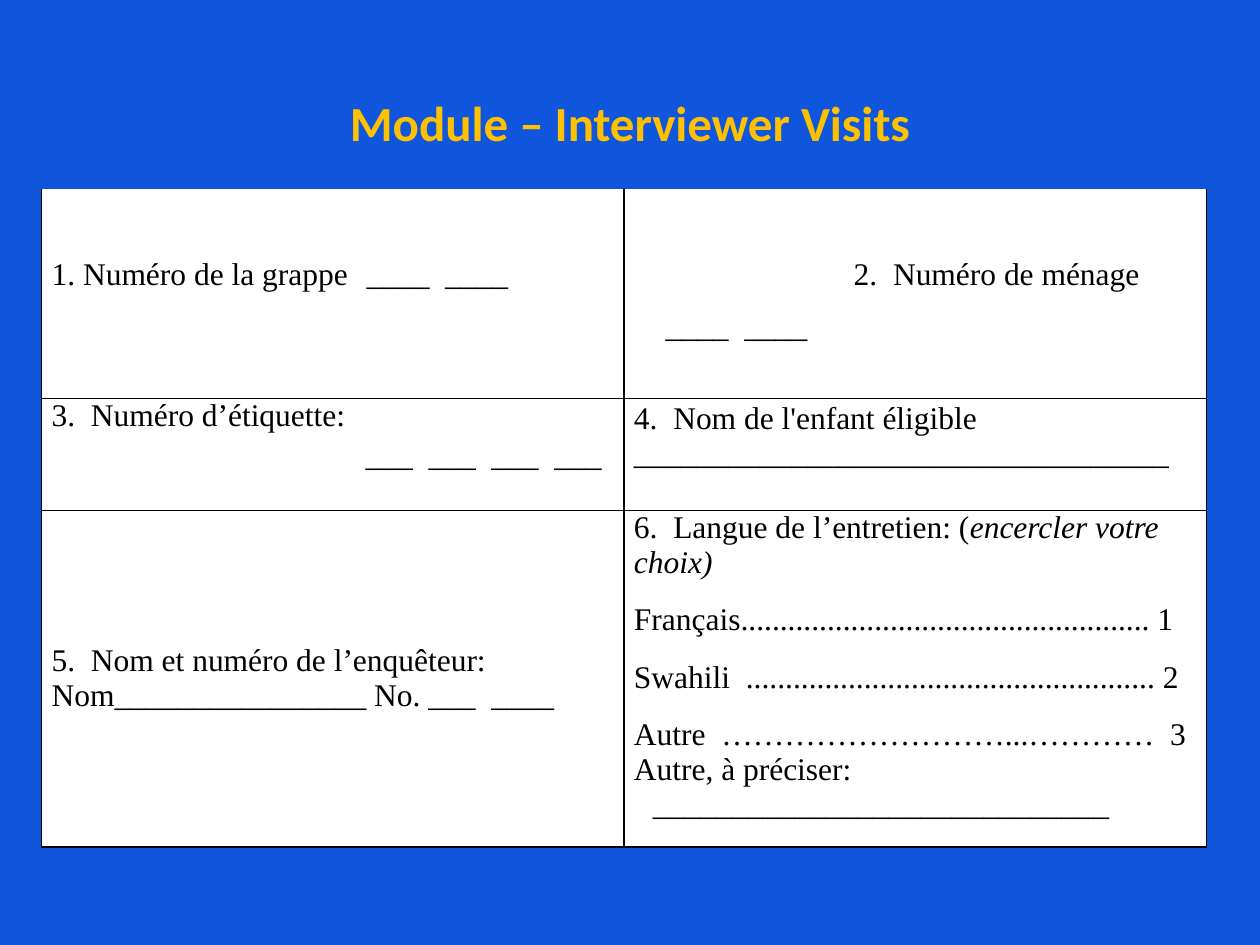
from lxml import etree
from pptx import Presentation
from pptx.dml.color import RGBColor
from pptx.enum.text import MSO_ANCHOR, PP_ALIGN
from pptx.oxml.ns import qn
from pptx.util import Cm, Pt

TOP, MIDDLE, BOTTOM = MSO_ANCHOR.TOP, MSO_ANCHOR.MIDDLE, MSO_ANCHOR.BOTTOM
CENTER = PP_ALIGN.CENTER

BLUE, GOLD, WHITE, BLACK = "0F56DC", "FFC000", "FFFFFF", "000000"
BODY_FONT, TITLE_FONT = "Times New Roman", "Calibri"
HANGING = dict(left=0.38, first=-0.38)

# Each cell: anchor, top margin in cm, paragraphs of (text or spans, format)
QUESTIONS = [
    [
        (TOP, 1.37, [("1. Numéro de la grappe\t____  ____", dict(tab=7.24))]),
        (TOP, 1.37, [("2.  Numéro de ménage", dict(left=4.43)),
                     ("____  ____", dict(left=0.64, spacing=1.5))]),
    ],
    [
        (TOP, 0, [("3.  Numéro d’étiquette:", dict(after=2.9)),
                  ("___  ___  ___  ___", dict(left=6.33))]),
        (TOP, 0.06, [("4.  Nom de l'enfant éligible", HANGING),
                     ("__________________________________", {})]),
    ],
    [
        (MIDDLE, 0, [("5.  Nom et numéro de l’enquêteur:", HANGING),
                     ("Nom________________ No. ___  ____", {})]),
        (TOP, 0, [
            ([("6.  Langue de l’entretien: (", False),
              ("encercler votre choix)", True)], dict(after=2.9)),
            ("Français.................................................... 1",
             dict(spacing=1.5, after=2.9)),
            ("Swahili  .................................................... 2",
             dict(spacing=1.5, after=2.9)),
            ("Autre  ………………………...…………  3", dict(HANGING, spacing=1.5)),
            ("Autre, à préciser: _____________________________", HANGING),
        ]),
    ],
]


def color(value):
    return RGBColor.from_string(value)


def write(para, text, size=18, font=BODY_FONT, fill=BLACK, bold=False,
          left=0, first=0, tab=None, spacing=1.0, after=0, align=None):
    """Fill a paragraph with text or (text, italic) spans; indents are in cm."""
    props = para._p.get_or_add_pPr()
    props.set("marL", str(Cm(left)))
    props.set("indent", str(Cm(first)))
    if tab:
        stops = etree.SubElement(props, qn("a:tabLst"))
        etree.SubElement(stops, qn("a:tab"), pos=str(Cm(tab)), algn="l")
    para.line_spacing = spacing
    para.space_after = Pt(after)
    para.alignment = align
    spans = [(text, False)] if isinstance(text, str) else text
    for words, italic in spans:
        span = para.add_run()
        span.text = words
        span.font.name = font
        span.font.size = Pt(size)
        span.font.bold = bold
        span.font.italic = italic
        span.font.color.rgb = color(fill)


def draw_borders(cell, sides):
    """Draw black lines on the given sides (L, R, T, B) and none on the rest."""
    props = cell._tc.get_or_add_tcPr()
    for side in "LRTB":
        line = etree.SubElement(props, qn(f"a:ln{side}"), w=str(Pt(1)))
        if side in sides:
            fill = etree.SubElement(line, qn("a:solidFill"))
            etree.SubElement(fill, qn("a:srgbClr"), val=BLACK)
        else:
            etree.SubElement(line, qn("a:noFill"))


def fill_cell(cell, anchor, top_margin, paragraphs, sides):
    draw_borders(cell, sides)
    cell.fill.solid()
    cell.fill.fore_color.rgb = color(WHITE)
    cell.vertical_anchor = anchor
    cell.margin_left = cell.margin_right = Cm(0.2)
    cell.margin_top, cell.margin_bottom = Cm(top_margin), 0
    frame = cell.text_frame
    for index, (text, style) in enumerate(paragraphs):
        para = frame.add_paragraph() if index else frame.paragraphs[0]
        write(para, text, **style)


def add_title(page, left, top, width, height):
    box = page.shapes.add_textbox(Cm(left), Cm(top), Cm(width), Cm(height))
    frame = box.text_frame
    frame.word_wrap = True
    frame.vertical_anchor = BOTTOM
    write(frame.paragraphs[0], "Module – Interviewer Visits", size=28,
          font=TITLE_FONT, fill=GOLD, bold=True, spacing=Pt(30), align=CENTER)


def add_questions(page, left, top, width, row_heights):
    rows, columns = len(QUESTIONS), len(QUESTIONS[0])
    table = page.shapes.add_table(rows, columns, Cm(left), Cm(top), Cm(width),
                                  Cm(sum(row_heights))).table
    table.first_row = table.horz_banding = False
    for column in table.columns:
        column.width = Cm(width / columns)
    for r, height in enumerate(row_heights):
        table.rows[r].height = Cm(height)
        for c, content in enumerate(QUESTIONS[r]):
            fill_cell(table.cell(r, c), *content, sides="LRTB" if r else "LRB")


def main():
    deck = Presentation()
    deck.slide_width, deck.slide_height = Cm(25.4), Cm(19.05)
    page = deck.slides.add_slide(deck.slide_layouts[6])
    page.background.fill.solid()
    page.background.fill.fore_color.rgb = color(BLUE)
    add_title(page, 1.27, 0, 22.86, 3.18)
    add_questions(page, 0.84, 3.81, 23.48, [4.22, 2.26, 6.27])
    deck.save("out.pptx")


if __name__ == "__main__":
    main()
